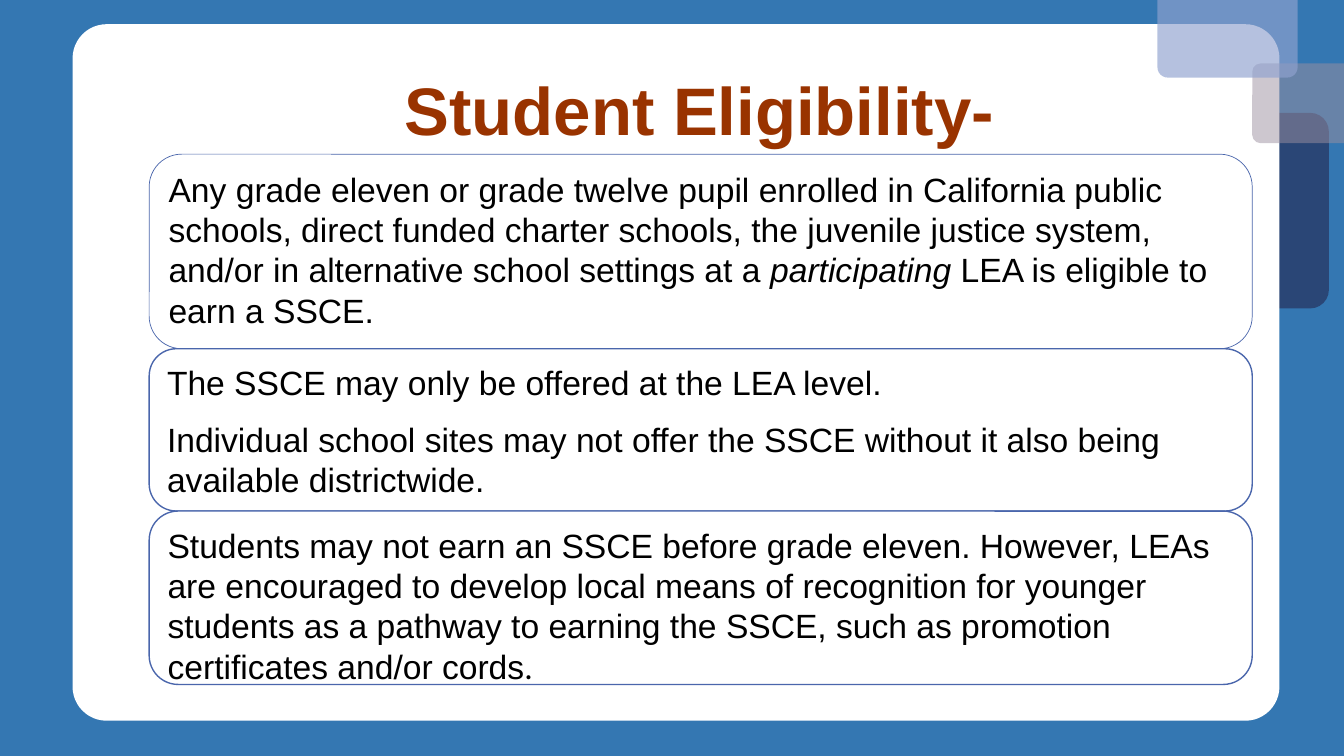
from dataclasses import dataclass

from lxml import etree
from pptx import Presentation
from pptx import util as u
from pptx.dml.color import RGBColor
from pptx.enum import shapes, text
from pptx.oxml.ns import qn


@dataclass(frozen=True)
class Theme:
    background: str = "3477B2"
    panel: str = "FFFFFF"
    navy: str = "242852"
    mauve: str = "9D90A0"
    periwinkle: str = "90A2CF"
    outline: str = "4A66AC"
    heading: str = "993300"
    body: str = "000000"
    font: str = "Arial"
    stop_font: str = "Calibri"
    title_size: int = 48
    body_size: int = 24


THEME = Theme()
CARD_LEFT, CARD_WIDTH = 1.48, 10.94
CARD_TOP = 1.53
CARDS = [
    (1.93, 0.5, [[
        ("Any grade eleven or grade twelve pupil enrolled in California public schools, "
         "direct funded charter schools, the juvenile justice system, and/or in alternative "
         "school settings at a ", THEME.font, False),
        ("participating", THEME.font, True),
        (" LEA is eligible to earn a SSCE.", THEME.font, False),
    ]]),
    (1.61, 1, [
        [("The SSCE may only be offered at the LEA level.", THEME.font, False)],
        [("Individual school sites may not offer the SSCE without it also being "
          "available districtwide.", THEME.font, False)],
    ]),
    (1.72, 1, [[
        ("Students may not earn an SSCE before grade eleven. However, LEAs are encouraged "
         "to develop local means of recognition for younger students as a pathway to earning "
         "the SSCE, such as promotion certificates and/or cords", THEME.font, False),
        (".", THEME.stop_font, False),
    ]]),
]


def add_rounded(page, box, fill, corner=0.167, opacity=100):
    shape = page.shapes.add_shape(
        shapes.MSO_SHAPE.ROUNDED_RECTANGLE, *(u.Inches(side) for side in box))
    shape.shadow.inherit = False
    shape.adjustments[0] = corner
    shape.fill.solid()
    shape.fill.fore_color.rgb = RGBColor.from_string(fill)
    shape.line.fill.background()
    if opacity < 100:
        color = shape.fill._xPr.find(qn("a:solidFill"))[0]
        etree.SubElement(color, qn("a:alpha"), val=str(opacity * 1000))
    return shape


def style_span(span, size, color, font):
    span.font.size = u.Pt(size)
    span.font.name = font
    span.font.color.rgb = RGBColor.from_string(color)


def draw_backdrop(page):
    page.background.fill.solid()
    page.background.fill.fore_color.rgb = RGBColor.from_string(THEME.background)
    add_rounded(page, (10.96, 1.12, 2.22, 1.94), THEME.navy, 0.095, 62)
    add_rounded(page, (0.72, 0.24, 11.97, 6.91), THEME.panel, 0.049)
    add_rounded(page, (12.42, 0.63, 2.22, 0.79), THEME.mauve, 0.103, 50)
    add_rounded(page, (11.48, -0.53, 1.39, 1.3), THEME.periwinkle, 0.079, 66)


def draw_title(page, box, wording):
    title = page.shapes.add_textbox(*(u.Inches(side) for side in box))
    frame = title.text_frame
    frame.word_wrap = True
    frame.vertical_anchor = text.MSO_ANCHOR.MIDDLE
    frame.text = wording
    para = frame.paragraphs[0]
    para.alignment = text.PP_ALIGN.CENTER
    para.line_spacing = 0.9
    style_span(para.runs[0], THEME.title_size, THEME.heading, THEME.font)
    para.runs[0].font.bold = True


def draw_card(page, box, line_width, paragraphs):
    card = add_rounded(page, box, THEME.panel)
    card.line.color.rgb = RGBColor.from_string(THEME.outline)
    card.line.width = u.Pt(line_width)
    frame = card.text_frame
    frame.word_wrap = True
    frame.vertical_anchor = text.MSO_ANCHOR.TOP
    for index, pieces in enumerate(paragraphs):
        para = frame.add_paragraph() if index else frame.paragraphs[0]
        para.alignment = text.PP_ALIGN.LEFT
        para.space_after = u.Pt(12)
        for wording, font, italic in pieces:
            span = para.add_run()
            span.text = wording
            style_span(span, THEME.body_size, THEME.body, font)
            span.font.italic = italic


def draw_cards(page, left, top, width):
    for height, line_width, paragraphs in CARDS:
        draw_card(page, (left, top, width, height), line_width, paragraphs)
        top += height


def main():
    deck = Presentation()
    deck.slide_width, deck.slide_height = u.Inches(13.33), u.Inches(7.5)
    page = deck.slides.add_slide(deck.slide_layouts[6])
    draw_backdrop(page)
    draw_title(page, (1.47, 0.4, CARD_WIDTH, 1.45), "Student Eligibility-")
    draw_cards(page, CARD_LEFT, CARD_TOP, CARD_WIDTH)
    deck.save("out.pptx")


if __name__ == "__main__":
    main()
